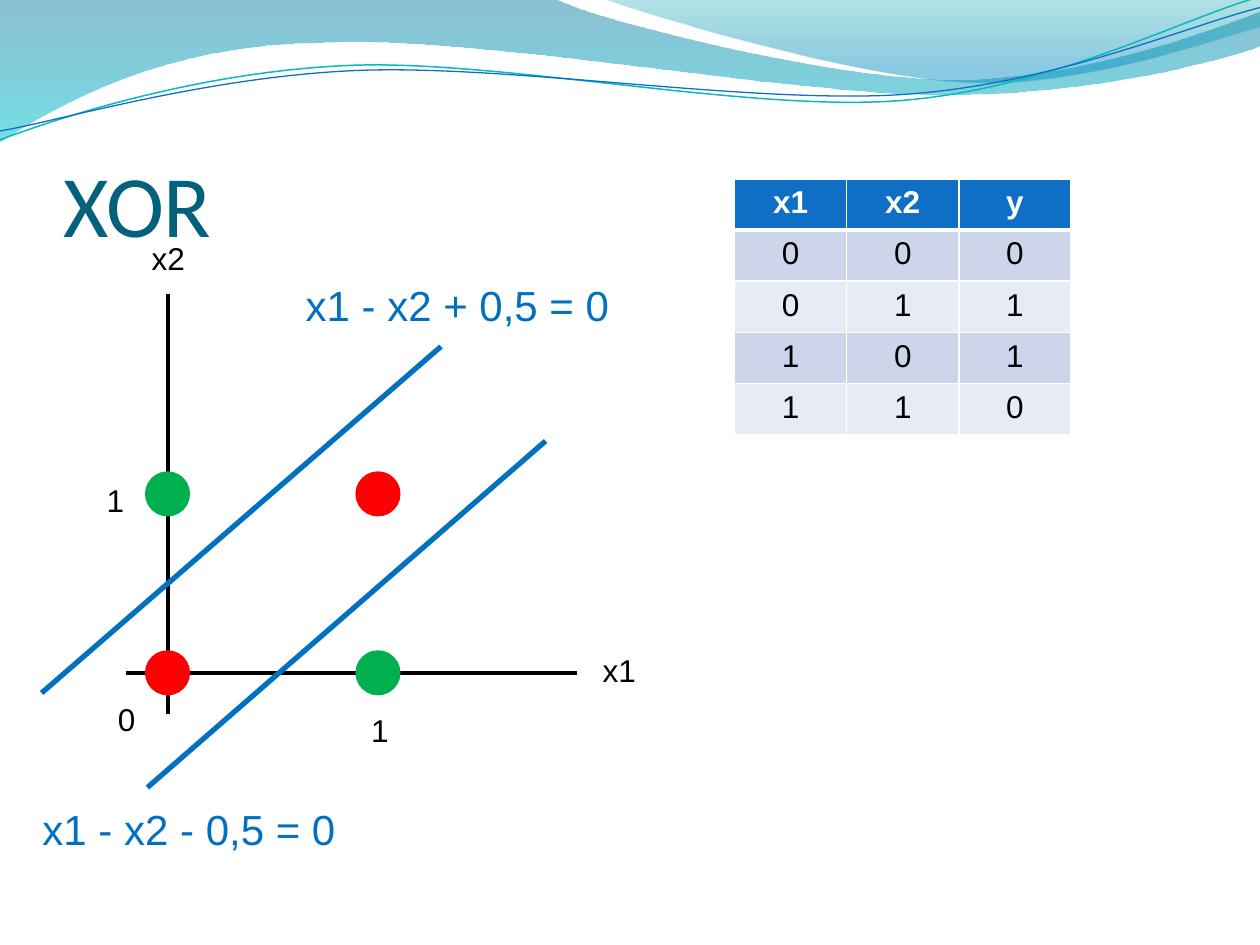
"""Build the XOR slide: truth table, plotted points and two separating lines."""
import dataclasses
import typing

import lxml.etree
import pptx
import pptx.dml.color
import pptx.enum.shapes
import pptx.enum.text
import pptx.oxml.ns
import pptx.util

Inches = pptx.util.Inches
Pt = pptx.util.Pt
qn = pptx.oxml.ns.qn
Point = tuple[float, float]

COLORS = {
    "title": "04617B", "black": "000000", "white": "FFFFFF", "red": "FF0000",
    "green": "00B050", "separator": "0070C0", "header": "0F6FC6",
    "band_dark": "CCD5EA", "band_light": "E7EBF5",
    "deep_blue": "0074A1", "cyan": "00C6CF", "teal": "00A1A9", "azure": "008BBF",
    "wave_teal": "0AB8BF", "wave_blue": "0F6FC6",
}


class Stop(typing.NamedTuple):
    position: float
    color: str
    opacity: int


@dataclasses.dataclass
class Wave:
    start: Point
    segments: list[tuple[float, ...]]
    stops: tuple[Stop, ...] = ()
    line: str = ""
    weight: float = 0


class Line(typing.NamedTuple):
    begin: Point
    end: Point
    color: str
    weight: float


class Label(typing.NamedTuple):
    text: str
    left: float
    top: float
    width: float = 0.67
    height: float = 0.4
    size: int = 18
    color: str = "black"


WAVES = [
    Wave((0, -0.01), [
        (4.4, -0.01), (4.76, 0.17, 6.64, 0.63, 7.58, 0.63),
        (8.53, 0.63, 9.58, 0.26, 10, 0.09), (10.01, 0.36),
        (9.83, 0.44, 8.7, 0.76, 7.46, 0.75), (6.22, 0.75, 3.82, 0.28, 2.57, 0.34),
        (1.29, 0.35, 0.46, 0.83, -0.01, 1.13),
    ], (Stop(0, "deep_blue", 45), Stop(1, "cyan", 55))),
    Wave((4.79, -0.01), [
        (5.09, 0.11, 6.82, 0.62, 7.69, 0.65), (8.56, 0.69, 9.61, 0.32, 10, 0.21), (10, 0),
    ], (Stop(0, "teal", 30), Stop(0.8, "azure", 45))),
    Wave((0, 1.11), [
        (0.48, 0.93, 1.58, 0.57, 2.77, 0.52), (3.95, 0.47, 5.93, 0.89, 7.13, 0.8),
        (8.33, 0.71, 9.38, 0.15, 9.98, -0.02),
    ], line="wave_teal", weight=0.85),
    Wave((0, 1.04), [
        (0.47, 0.96, 1.64, 0.61, 2.83, 0.56), (4.03, 0.51, 5.97, 0.83, 7.17, 0.75),
        (8.36, 0.67, 9.41, 0.21, 10, 0.06),
    ], line="wave_blue", weight=0.75),
]
ORIGIN = (1.33, 5.34)
UNIT = (1.67, 1.42)
DOT_SIZE = 0.33
AXES = [
    Line((ORIGIN[0], 2.33), (ORIGIN[0], 5.67), "black", 2.25),
    Line((4.58, ORIGIN[1]), (1, ORIGIN[1]), "black", 2.25),
]
SEPARATORS = [
    Line((1.17, 6.25), (4.33, 3.5), "separator", 3),
    Line((0.33, 5.5), (3.5, 2.75), "separator", 3),
]
AXIS_LABELS = [
    Label("0", 0.67, 5.51), Label("1", 2.68, 5.59), Label("1", 0.58, 3.77),
    Label("x1", 4.58, 5.12), Label("x2", 1, 1.85),
]
EQUATIONS = [
    Label("x1 - x2 - 0,5 = 0", 0, 6.33, 3, 0.51, 24, "separator"),
    Label("x1 - x2 + 0,5 = 0", 2.17, 2.17, 2.92, 0.51, 24, "separator"),
]
HEADERS = ("x1", "x2", "y")
TRUTH = [(a, b, a ^ b) for a in (0, 1) for b in (0, 1)]


def rgb(name: str) -> pptx.dml.color.RGBColor:
    return pptx.dml.color.RGBColor.from_string(COLORS[name])


def draw_wave(shapes: typing.Any, wave: Wave) -> None:
    builder = shapes.build_freeform(*map(Inches, wave.start))
    anchors = [(Inches(segment[-2]), Inches(segment[-1])) for segment in wave.segments]
    builder.add_line_segments(anchors, close=bool(wave.stops))
    shape = builder.convert_to_shape()
    for edge, segment in zip(list(shape._element.iter(qn("a:lnTo"))), wave.segments):
        if len(segment) == 6:
            curve = lxml.etree.Element(qn("a:cubicBezTo"))
            for x, y in zip(segment[::2], segment[1::2]):
                lxml.etree.SubElement(curve, qn("a:pt"), x=str(Inches(x) - shape.left),
                                      y=str(Inches(y) - shape.top))
            edge.getparent().replace(edge, curve)
    shape.shadow.inherit = False
    if not wave.stops:
        shape.fill.background()
        shape.line.color.rgb = rgb(wave.line)
        shape.line.width = Pt(wave.weight)
        return
    shape.line.fill.background()
    shape.fill.gradient()
    shape.fill.gradient_angle = 270
    for target, stop in zip(shape.fill.gradient_stops, wave.stops):
        target.position = stop.position
        target.color.rgb = rgb(stop.color)
    for color, stop in zip(shape._element.spPr.iter(qn("a:srgbClr")), wave.stops):
        lxml.etree.SubElement(color, qn("a:alpha"), val=str(stop.opacity * 1000))


def draw_line(shapes: typing.Any, line: Line) -> None:
    ends = map(Inches, line.begin + line.end)
    connector = shapes.add_connector(pptx.enum.shapes.MSO_CONNECTOR.STRAIGHT, *ends)
    connector.line.color.rgb = rgb(line.color)
    connector.line.width = Pt(line.weight)
    lxml.etree.SubElement(connector._element.spPr, qn("a:effectLst"))


def draw_dot(shapes: typing.Any, x1: int, x2: int, y: int) -> None:
    left = ORIGIN[0] + x1 * UNIT[0] - DOT_SIZE / 2
    top = ORIGIN[1] - x2 * UNIT[1] - DOT_SIZE / 2
    dot = shapes.add_shape(pptx.enum.shapes.MSO_SHAPE.OVAL,
                           *map(Inches, (left, top, DOT_SIZE, DOT_SIZE)))
    dot.shadow.inherit = False
    dot.fill.solid()
    dot.fill.fore_color.rgb = dot.line.color.rgb = rgb("green" if y else "red")
    dot.line.width = Pt(2)


def write(frame: typing.Any, text: str, size: int, color: str, font: str = "Arial",
          bold: bool = False, align: str = "CENTER") -> None:
    paragraph = frame.paragraphs[0]
    paragraph.text = text
    paragraph.alignment = pptx.enum.text.PP_ALIGN[align]
    paragraph.font.name, paragraph.font.size = font, Pt(size)
    paragraph.font.bold = bold
    paragraph.font.color.rgb = rgb(color)


def draw_label(shapes: typing.Any, label: Label) -> None:
    box = shapes.add_textbox(*map(Inches, label[1:5]))
    box.text_frame.word_wrap = True
    write(box.text_frame, label.text, label.size, label.color)


def draw_title(shapes: typing.Any, text: str) -> None:
    frame = shapes.add_textbox(*map(Inches, (0.5, 0.77, 9.08, 1.25))).text_frame
    frame.word_wrap = True
    frame.vertical_anchor = pptx.enum.text.MSO_ANCHOR.BOTTOM
    frame.margin_left = frame.margin_right = frame.margin_bottom = 0
    write(frame, text, 50, "title", "Calibri", align="LEFT")


def draw_truth_table(shapes: typing.Any) -> None:
    rows = [HEADERS, *TRUTH]
    table = shapes.add_table(len(rows), 3, *map(Inches, (5.83, 1.42, 2.67, 2.03))).table
    for r, values in enumerate(rows):
        fill = "header" if r == 0 else "band_dark" if r % 2 else "band_light"
        weights = {"L": 1, "R": 1, "T": 3 if r == 1 else 1, "B": 3 if r == 0 else 1}
        for cell, value in zip(table.rows[r].cells, values):
            cell.fill.solid()
            cell.fill.fore_color.rgb = rgb(fill)
            for index, (side, weight) in enumerate(weights.items()):
                border = lxml.etree.Element(qn(f"a:ln{side}"), w=str(Pt(weight)))
                paint = lxml.etree.SubElement(border, qn("a:solidFill"))
                lxml.etree.SubElement(paint, qn("a:srgbClr"), val=COLORS["white"])
                cell._tc.tcPr.insert(index, border)
            write(cell.text_frame, str(value), 18, "black" if r else "white", bold=r == 0)


def draw_all(shapes: typing.Any, draw: typing.Callable, items: list) -> None:
    for item in items:
        draw(shapes, item)


def main() -> None:
    deck = pptx.Presentation()
    deck.slide_width, deck.slide_height = Inches(10), Inches(7.5)
    shapes = deck.slides.add_slide(deck.slide_layouts[6]).shapes
    draw_all(shapes, draw_wave, WAVES)
    draw_title(shapes, "XOR")
    draw_all(shapes, draw_line, AXES)
    for row in TRUTH:
        draw_dot(shapes, *row)
    draw_all(shapes, draw_label, AXIS_LABELS)
    draw_truth_table(shapes)
    draw_all(shapes, draw_line, SEPARATORS)
    draw_all(shapes, draw_label, EQUATIONS)
    deck.save("out.pptx")


if __name__ == "__main__":
    main()
